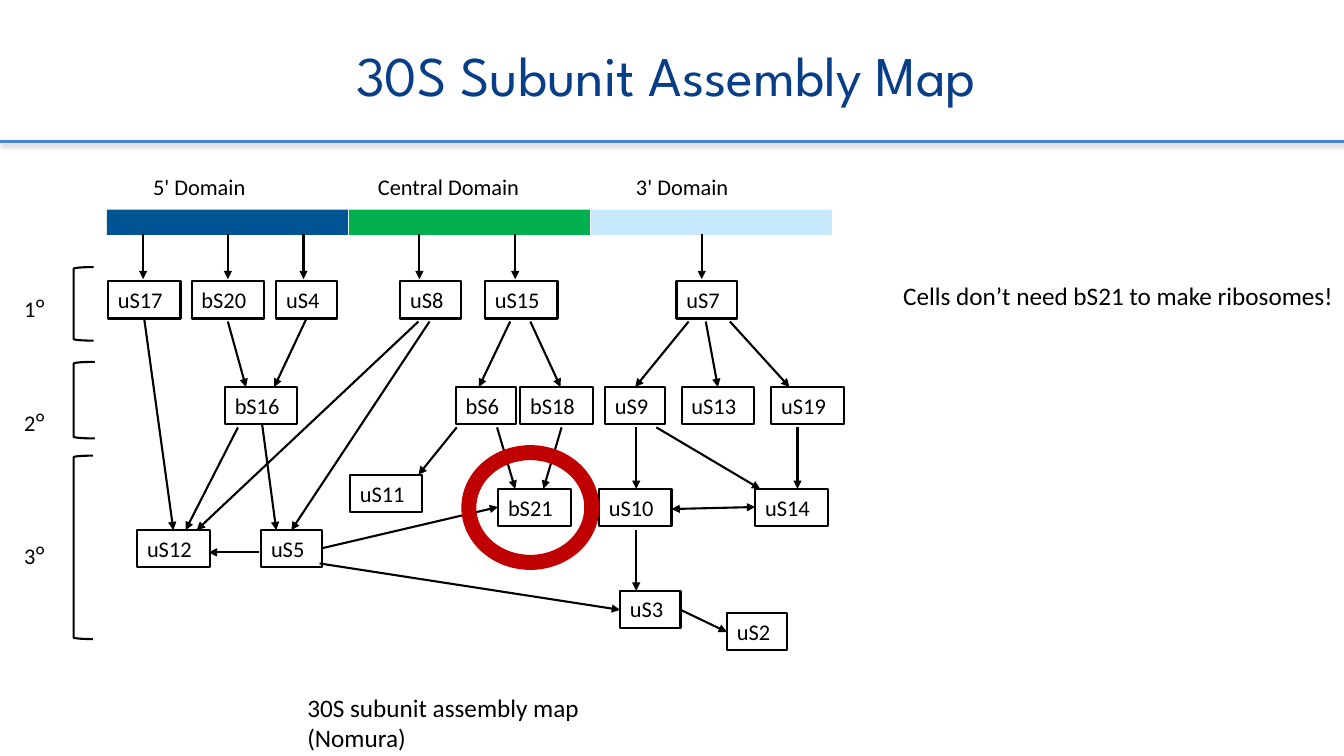
from dataclasses import dataclass

from lxml import etree
from pptx import Presentation
from pptx.dml.color import RGBColor
from pptx.enum.shapes import MSO_CONNECTOR, MSO_SHAPE
from pptx.enum.text import MSO_ANCHOR, PP_ALIGN
from pptx.oxml.ns import qn
from pptx.util import Inches, Pt

STRAIGHT = MSO_CONNECTOR.STRAIGHT
RECT, BRACKET, DONUT = MSO_SHAPE.RECTANGLE, MSO_SHAPE.LEFT_BRACKET, MSO_SHAPE.DONUT
TOP, MIDDLE = MSO_ANCHOR.TOP, MSO_ANCHOR.MIDDLE
LEFT, CENTER = PP_ALIGN.LEFT, PP_ALIGN.CENTER

COLORS = {
    "ink": "000000", "title": "073E87", "rule": "4584D3", "ring": "C00000",
    "five": "005493", "central": "00B050", "three": "C6E7FC",
}
CELL = Inches(0.1)
COLS, ROWS = 133.3, 75
BOX_H = 3.7
ROW = {"primary": 27.9, "secondary": 38.4, "uS11": 47.1, "tertiary": 48.5,
       "lower": 52.6, "uS3": 58.6, "uS2": 60.8}


@dataclass(frozen=True)
class Protein:
    name: str
    col: float
    row: str

    @property
    def width(self) -> float:
        return 7.2 if len(self.name) == 4 else 6


@dataclass(frozen=True)
class Link:
    source: str
    target: str
    start: float
    end: float
    gap: float = 0.3


@dataclass(frozen=True)
class Segment:
    x1: float
    y1: float
    x2: float
    y2: float
    both: bool = False


@dataclass(frozen=True)
class Label:
    text: str
    col: float
    row: float
    width: float
    height: float = 3.7
    size: int = 16
    color: str = "ink"
    font: str = "Calibri"
    align: PP_ALIGN = LEFT
    anchor: MSO_ANCHOR = TOP


@dataclass(frozen=True)
class Domain:
    name: str
    color: str
    label_col: float
    label_width: float


@dataclass(frozen=True)
class Level:
    name: str
    label_row: float
    row: float
    width: float
    height: float


DOMAINS = [
    Domain("5' Domain", "five", 14.2, 12),
    Domain("Central Domain", "central", 36.5, 17.6),
    Domain("3' Domain", "three", 62.1, 12),
]
LEVELS = [
    Level("1ᴼ", 28.8, 26.5, 2, 7.3),
    Level("2ᴼ", 40.1, 35.9, 2.1, 7.6),
    Level("3ᴼ", 53.3, 45.2, 1.9, 18.2),
]
PROTEINS = [
    Protein("uS17", 10.7, "primary"), Protein("bS20", 19, "primary"),
    Protein("uS4", 27.4, "primary"), Protein("uS8", 39.7, "primary"),
    Protein("uS15", 48.1, "primary"), Protein("uS7", 67.1, "primary"),
    Protein("bS16", 22.3, "secondary"), Protein("bS6", 45.2, "secondary"),
    Protein("bS18", 51.6, "secondary"), Protein("uS9", 60, "secondary"),
    Protein("uS13", 67.6, "secondary"), Protein("uS19", 76.5, "secondary"),
    Protein("uS11", 34.7, "uS11"), Protein("bS21", 49.4, "tertiary"),
    Protein("uS10", 59.4, "tertiary"), Protein("uS14", 74.9, "tertiary"),
    Protein("uS12", 13.6, "lower"), Protein("uS5", 25.9, "lower"),
    Protein("uS3", 61.5, "uS3"), Protein("uS2", 72.1, "uS2"),
]
DOMAIN_ARROWS = [14.2, 22.6, 30.1, 41.6, 51.1, 69.6]
LINKS = [
    Link("bS20", "bS16", 22.6, 24.4), Link("uS4", "bS16", 30.4, 27.2, 0),
    Link("bS16", "uS5", 26, 27.4, 0), Link("bS16", "uS12", 23.6, 18.4),
    Link("uS17", "uS12", 14.3, 17.2, 0), Link("uS8", "uS12", 41.5, 19.5),
    Link("uS8", "uS5", 42.6, 28.9), Link("uS15", "bS6", 50.6, 47.5),
    Link("uS15", "bS18", 52.6, 55.6), Link("bS6", "uS11", 45.3, 41.5),
    Link("bS6", "bS21", 49.3, 51.1), Link("bS18", "bS21", 55.7, 53.9),
    Link("uS7", "uS9", 68.3, 63), Link("uS7", "uS13", 70, 71.2),
    Link("uS7", "uS19", 72.4, 78.3), Link("uS9", "uS10", 63.1, 63.1),
    Link("uS9", "uS14", 65.1, 75.4), Link("uS19", "uS14", 79.1, 79.1),
    Link("uS10", "uS3", 63.1, 63.1, 0.4),
]
SIDE_ARROWS = [
    Segment(31.9, 54.4, 49.4, 50.3), Segment(31.7, 55.9, 61.5, 60.5),
    Segment(66.6, 50.5, 74.9, 50.3, True), Segment(67.5, 60.5, 72.1, 62.7),
    Segment(25.7, 54.8, 20.7, 54.8),
]
TEXTS = [
    Label("30S Subunit Assembly Map", 0, 1.3, 132.1, 12.1, 40, "title",
          "League Spartan", CENTER, MIDDLE),
    Label("30S subunit assembly map (Nomura)", 29.5, 68.2, 34.3, 3.4, 18),
    Label("Cells don’t need bS21 to make ribosomes!", 88.6, 27.3, 45.3, 4, 18),
]


def grid(value: float) -> int:
    return round(value * CELL)


def rgb(name: str) -> RGBColor:
    return RGBColor.from_string(COLORS[name])


def write(sp, label: Label) -> None:
    tf = sp.text_frame
    tf.text = label.text
    tf.word_wrap = True
    tf.vertical_anchor = label.anchor
    p = tf.paragraphs[0]
    p.alignment = label.align
    r = p.runs[0]
    r.font.size, r.font.name = Pt(label.size), label.font
    r.font.color.rgb = rgb(label.color)


def add_label(s, label: Label) -> None:
    box = map(grid, (label.col, label.row, label.width, label.height))
    write(s.shapes.add_textbox(*box), label)


def add_figure(s, kind: MSO_SHAPE, col: float, row: float, width: float, height: float,
               fill: str = "", line: str = "", weight: float = 1.5):
    sp = s.shapes.add_shape(kind, *map(grid, (col, row, width, height)))
    sp.shadow.inherit = False
    if fill:
        sp.fill.solid()
        sp.fill.fore_color.rgb = rgb(fill)
    else:
        sp.fill.background()
    if line:
        sp.line.color.rgb = rgb(line)
        sp.line.width = Pt(weight)
    else:
        sp.line.fill.background()
    return sp


def add_line(s, seg: Segment, color: str = "ink", weight: float = 1.5):
    sp = s.shapes.add_connector(STRAIGHT, *map(grid, (seg.x1, seg.y1, seg.x2, seg.y2)))
    sp.line.color.rgb = rgb(color)
    sp.line.width = Pt(weight)
    effects = etree.SubElement(sp._element.spPr, qn("a:effectLst"))
    return sp, effects


def add_arrow(s, seg: Segment) -> None:
    sp, _ = add_line(s, seg)
    for end in ("a:headEnd", "a:tailEnd") if seg.both else ("a:tailEnd",):
        etree.SubElement(sp.line._get_or_add_ln(), qn(end), type="triangle")


def add_header_rule(s) -> None:
    _, effects = add_line(s, Segment(COLS, 14, 0, 14), "rule", 2)
    shadow = etree.SubElement(effects, qn("a:outerShdw"), blurRad=str(Pt(3.1)),
                              dist=str(Pt(1.6)), dir="5400000", rotWithShape="0")
    color = etree.SubElement(shadow, qn("a:srgbClr"), val=COLORS["ink"])
    etree.SubElement(color, qn("a:alpha"), val="38000")


def main() -> None:
    prs = Presentation()
    prs.slide_width, prs.slide_height = grid(COLS), grid(ROWS)
    s = prs.slides.add_slide(prs.slide_layouts[6])
    add_header_rule(s)
    for label in TEXTS:
        add_label(s, label)
    for i, d in enumerate(DOMAINS):
        add_figure(s, RECT, 10.6 + 24 * i, 20.8, 23.9, 2.5, d.color)
        add_label(s, Label(d.name, d.label_col, 16.7, d.label_width))
    for v in LEVELS:
        add_label(s, Label(v.name, 1.4, v.label_row, 4.4))
        add_figure(s, BRACKET, 7.3, v.row, v.width, v.height, line="ink")
    for m in PROTEINS:
        label = Label(m.name, m.col, ROW[m.row], m.width, BOX_H)
        write(add_figure(s, RECT, m.col, ROW[m.row], m.width, BOX_H, line="ink"), label)
    tops = {m.name: ROW[m.row] for m in PROTEINS}
    drops = [Segment(x, 23.2, x, 27.7) for x in DOMAIN_ARROWS]
    links = [Segment(k.start, tops[k.source] + BOX_H + k.gap, k.end, tops[k.target])
             for k in LINKS]
    for seg in drops + links + SIDE_ARROWS:
        add_arrow(s, seg)
    ring = add_figure(s, DONUT, 45.9, 44.3, 13.4, 12.1, "ring", "ring", 2)
    ring.adjustments[0] = 0.1
    prs.save("out.pptx")


if __name__ == "__main__":
    main()
